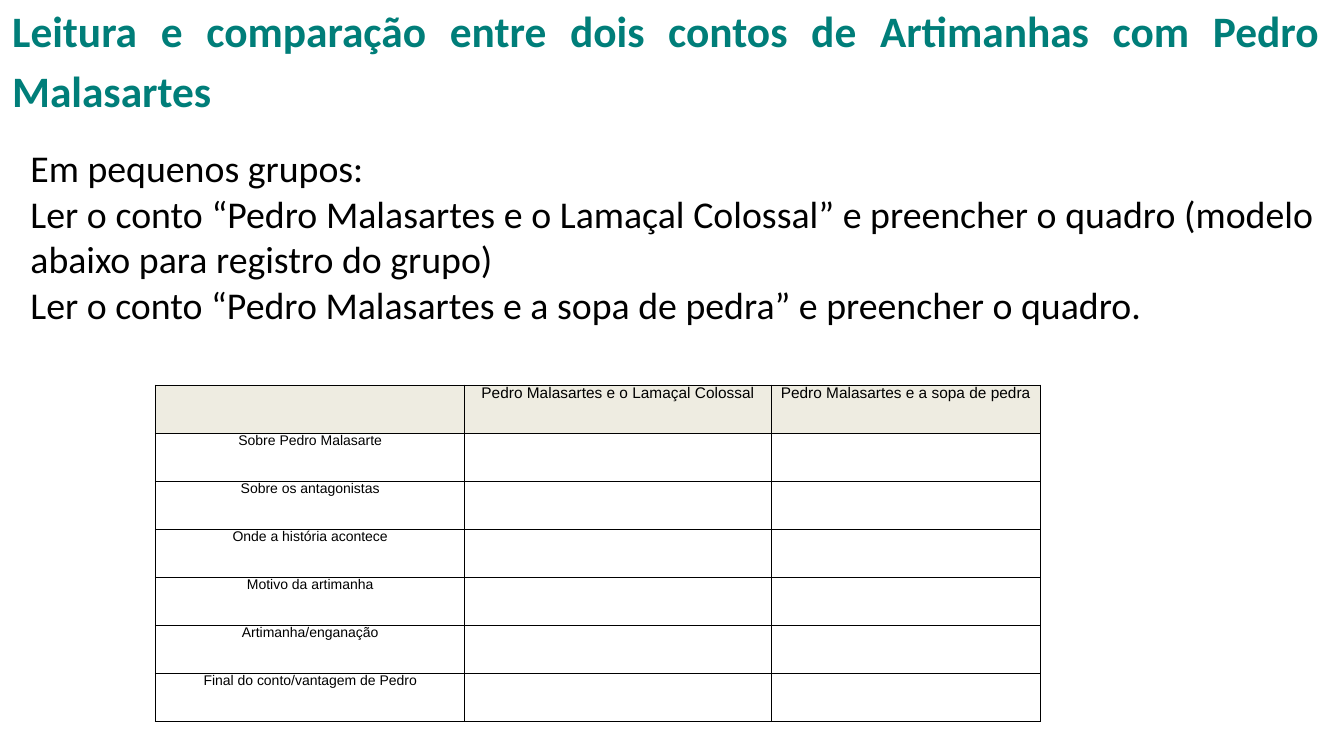
from lxml import etree
from pptx import Presentation
from pptx.dml.color import RGBColor
from pptx.enum import text
from pptx.oxml import ns
from pptx.util import Pt

BLACK, TEAL, SAND = "000000", "007E79", "EEECE1"


def add_run(para, words, size, font, color, bold=False):
    span = para.add_run()
    span.text = words
    span.font.size = Pt(size)
    span.font.name = font
    span.font.bold = bold
    span.font.color.rgb = RGBColor.from_string(color)


def place(box, left, top, width, height, inset):
    """Position a placeholder and set its top-anchored, wrapping text frame."""
    box.left, box.top, box.width, box.height = Pt(left), Pt(top), Pt(width), Pt(height)
    frame = box.text_frame
    frame.word_wrap = True
    frame.auto_size = text.MSO_AUTO_SIZE.NONE
    frame.vertical_anchor = text.MSO_ANCHOR.TOP
    frame.margin_left = frame.margin_right = Pt(7.2)
    frame.margin_top = frame.margin_bottom = Pt(inset)
    return frame


deck = Presentation()
deck.slide_width, deck.slide_height = Pt(960), Pt(540)
page = deck.slides.add_slide(deck.slide_layouts[1])

# Title
title = place(page.shapes.title, 1.5, -6.5, 947.5, 103, 3.6)
para = title.paragraphs[0]
para.alignment = text.PP_ALIGN.JUSTIFY
para.line_spacing = 1.15
add_run(para, "Leitura e comparação entre dois contos de Artimanhas com Pedro Malasartes",
        31, "Calibri", TEAL, bold=True)

# Instructions
instructions = [
    "Em pequenos grupos:",
    "Ler o conto “Pedro Malasartes e o Lamaçal Colossal” e preencher o quadro "
    "(modelo abaixo para registro do grupo)",
    "Ler o conto “Pedro Malasartes e a sopa de pedra” e preencher o quadro.",
]
body = place(page.placeholders[1], 14.5, 96.5, 931, 209, 7.2)
for index, words in enumerate(instructions):
    para = body.paragraphs[0] if index == 0 else body.add_paragraph()
    props = para._p.get_or_add_pPr()
    props.set("marL", "0")
    props.set("indent", "0")
    etree.SubElement(props, ns.qn("a:buNone"))
    para.alignment = text.PP_ALIGN.JUSTIFY
    para.space_before = Pt(0)
    add_run(para, words, 27, "Calibri", BLACK)

# Comparison table
rows = [
    ["", "Pedro Malasartes e o Lamaçal Colossal", "Pedro Malasartes e a sopa de pedra"],
    ["Sobre Pedro Malasarte", "", ""],
    ["Sobre os antagonistas", "", ""],
    ["Onde a história acontece", "", ""],
    ["Motivo da artimanha", "", ""],
    ["Artimanha/enganação", "", ""],
    ["Final do conto/vantagem de Pedro", "", ""],
]
widths = [221, 219, 192]
row_height = 34.3
table = page.shapes.add_table(len(rows), len(widths), Pt(111), Pt(275), Pt(sum(widths)),
                              Pt(row_height * len(rows))).table
table.first_row = table.horz_banding = False
for column, width in zip(table.columns, widths):
    column.width = Pt(width)

for r, labels in enumerate(rows):
    table.rows[r].height = Pt(row_height)
    for c, label in enumerate(labels):
        cell = table.cell(r, c)
        cell.margin_left = cell.margin_right = Pt(5)
        cell.margin_top = cell.margin_bottom = Pt(0)
        props = cell._tc.get_or_add_tcPr()
        for side in ("lnL", "lnR", "lnT", "lnB"):
            line = etree.SubElement(props, ns.qn("a:" + side), w=str(Pt(0.75)))
            paint = etree.SubElement(line, ns.qn("a:solidFill"))
            etree.SubElement(paint, ns.qn("a:srgbClr"), val=BLACK)
        if r == 0:
            cell.fill.solid()
            cell.fill.fore_color.rgb = RGBColor.from_string(SAND)
        else:
            cell.fill.background()
        if label:
            para = cell.text_frame.paragraphs[0]
            para.alignment = text.PP_ALIGN.CENTER
            add_run(para, label, 11 if r == 0 else 10, "Arial", BLACK)

deck.save("out.pptx")
